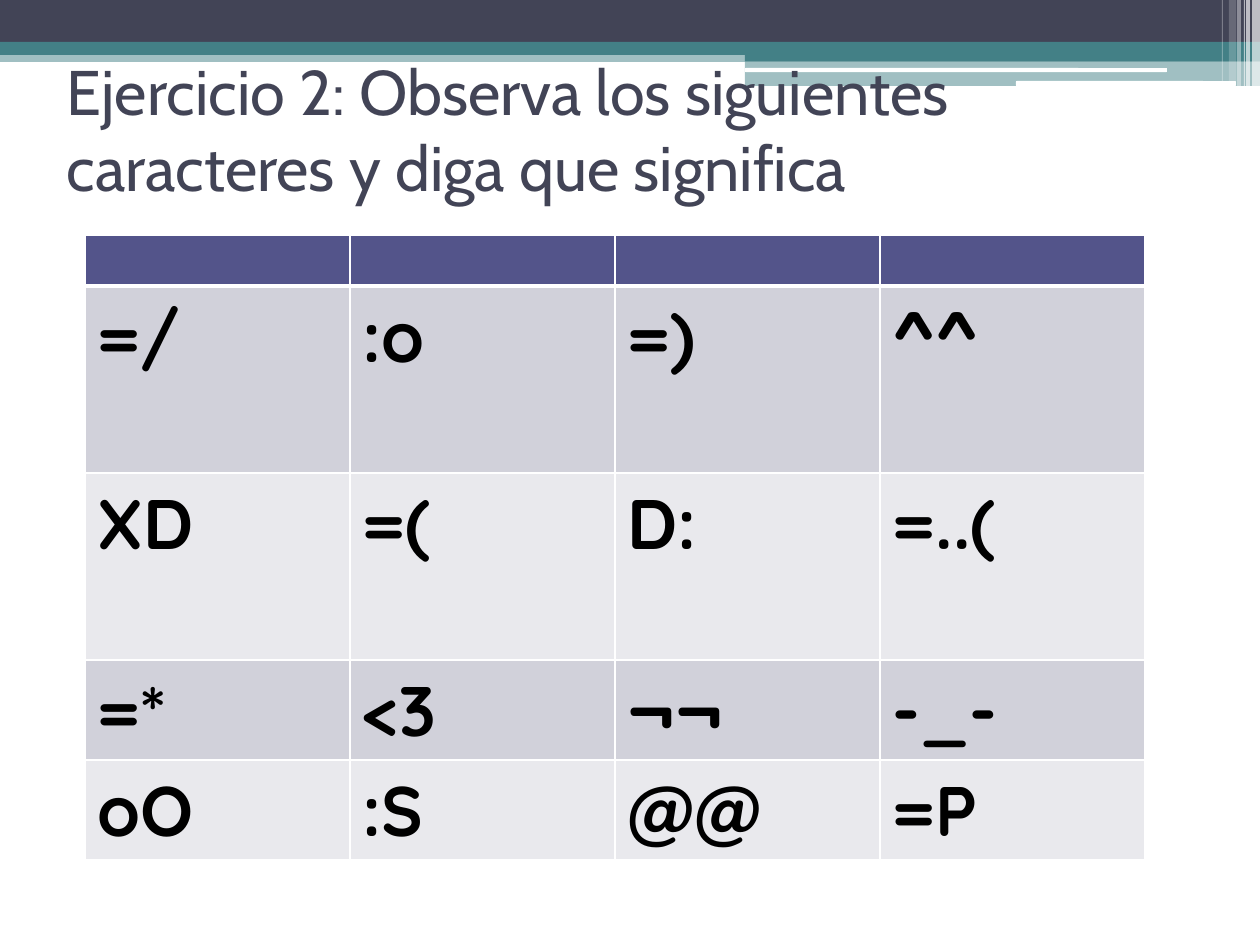
"""Build the slide with the emoticon exercise table."""
from lxml import etree
from pptx import Presentation, util as u
from pptx.dml.color import RGBColor
from pptx.enum import shapes, text
from pptx.oxml.ns import qn

PX = 914400 / 126
WHITE = RGBColor(0xFF, 0xFF, 0xFF)
BLACK = RGBColor(0x00, 0x00, 0x00)
SLATE = RGBColor(0x42, 0x44, 0x56)
TEAL = RGBColor(0x43, 0x80, 0x86)
HEADER = RGBColor(0x53, 0x54, 0x8A)
BANDS = [RGBColor(0xD1, 0xD1, 0xDA), RGBColor(0xE9, 0xE9, 0xED)]
RECT = shapes.MSO_SHAPE.RECTANGLE
ROUND = shapes.MSO_SHAPE.ROUNDED_RECTANGLE


def px(*lengths):
    return [u.Emu(round(n * PX)) for n in lengths]


def add_border(cell, side, points):
    ln = etree.SubElement(cell._tc.get_or_add_tcPr(), qn(f"a:{side}"), w=str(u.Pt(points)))
    fill = etree.SubElement(ln, qn("a:solidFill"))
    etree.SubElement(fill, qn("a:srgbClr"), val=str(WHITE))


prs = Presentation()
prs.slide_width, prs.slide_height = px(1260, 945)
s = prs.slides.add_slide(prs.slide_layouts[5])

bars = [
    (RECT, 0, 50, 1260, 12, TEAL, 50),
    (RECT, 0, 0, 1260, 42, SLATE, 100),
    (RECT, 0, 42, 1260, 13, TEAL, 100),
    (RECT, 745, 49, 515, 12, TEAL, 100),
    (RECT, 745, 61, 515, 25, TEAL, 50),
    (ROUND, 745, 68, 422, 4, WHITE, 100),
    (ROUND, 1016, 81, 220, 5, WHITE, 100),
    (RECT, 1252, 0, 8, 86, WHITE, 65),
    (RECT, 1246, 0, 4, 86, WHITE, 65),
    (RECT, 1244, 0, 1, 86, WHITE, 60),
    (RECT, 1237, 0, 4, 86, WHITE, 40),
    (RECT, 1229, 0, 7, 81, WHITE, 20),
    (RECT, 1222, 0, 1, 81, WHITE, 30),
]
for kind, x, y, w, h, color, opacity in bars:
    sp = s.shapes.add_shape(kind, *px(x, y, w, h))
    sp.shadow.inherit = False
    sp.line.fill.background()
    sp.fill.solid()
    sp.fill.fore_color.rgb = color
    if opacity < 100:
        clr = sp._element.spPr.find(f"{qn('a:solidFill')}/{qn('a:srgbClr')}")
        etree.SubElement(clr, qn("a:alpha"), val=str(opacity * 1000))

title = s.shapes.title
title.left, title.top, title.width, title.height = px(54, 55, 1134, 147)
s.shapes._spTree.append(title._element)
tf = title.text_frame
tf.word_wrap = True
tf.auto_size = text.MSO_AUTO_SIZE.NONE
tf.vertical_anchor = text.MSO_ANCHOR.MIDDLE
p = tf.paragraphs[0]
p.alignment = text.PP_ALIGN.LEFT
r = p.add_run()
r.text = "Ejercicio 2: Observa los siguientes caracteres y diga que significa"
r.font.size = u.Pt(36)
r.font.name = "Cabin"
r.font.color.rgb = SLATE

rows = [
    ["", "", "", ""],
    ["=/", ":o", "=)", "^^"],
    ["XD", "=(", "D:", "=..("],
    ["=*", "<3", "¬¬", "-_-"],
    ["oO", ":S", "@@", "=P"],
]
heights = px(51, 187, 187, 100, 99)
table = s.shapes.add_table(5, 4, *px(85, 235, 1060, 624)).table
for i, row in enumerate(rows):
    table.rows[i].height = heights[i]
    for j, emoticon in enumerate(row):
        cell = table.cell(i, j)
        add_border(cell, "lnL", 1)
        add_border(cell, "lnR", 1)
        add_border(cell, "lnT", 3 if i == 1 else 1)
        add_border(cell, "lnB", 3 if i == 0 else 1)
        cell.fill.solid()
        cell.fill.fore_color.rgb = BANDS[(i - 1) % 2] if i else HEADER
        if emoticon:
            r = cell.text_frame.paragraphs[0].add_run()
            r.text = emoticon
            r.font.size = u.Pt(40)
            r.font.name = "Quicksand"
            r.font.bold = True
            r.font.color.rgb = BLACK

prs.save("out.pptx")
